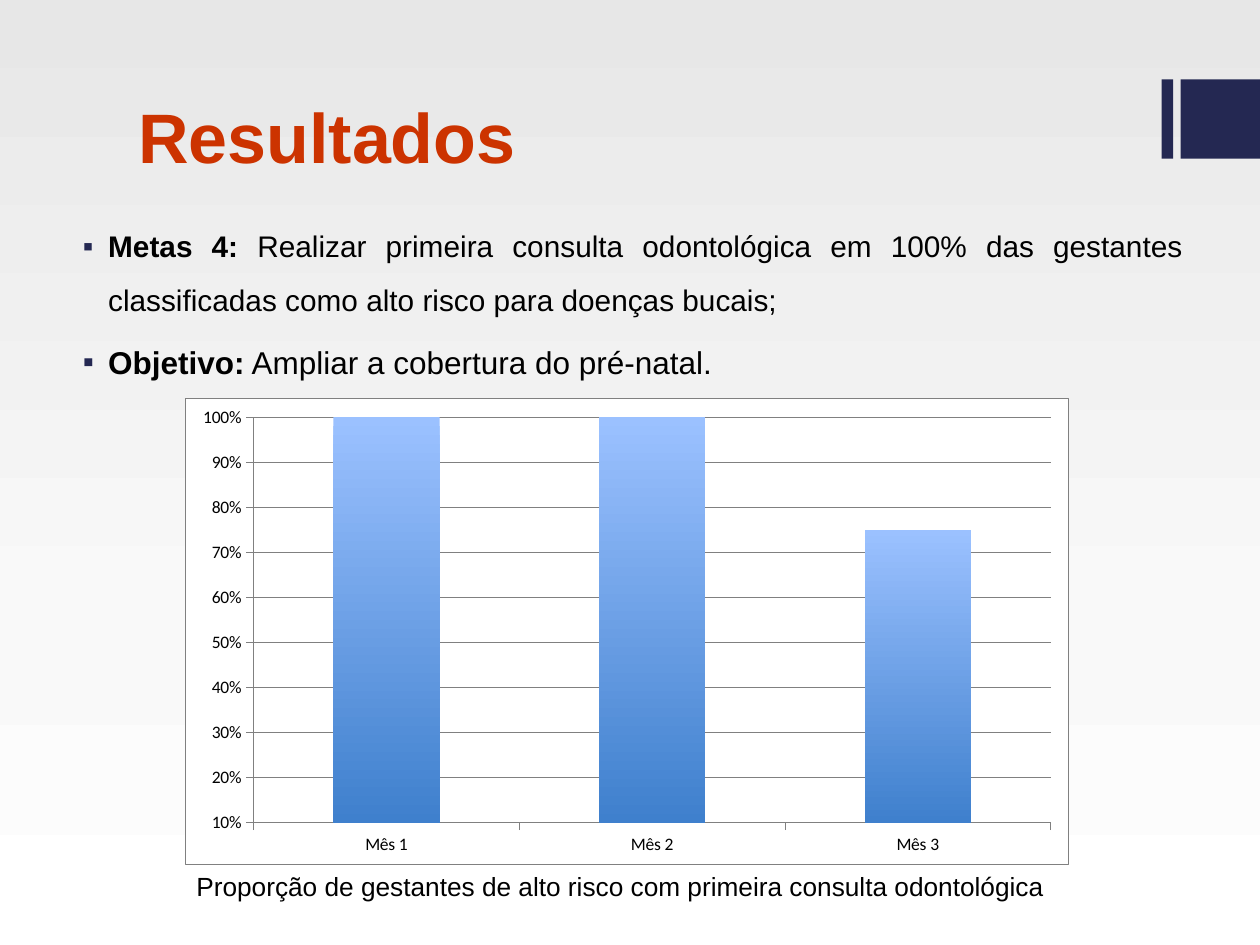
"""Build the results slide with goal 4 and its column chart."""
from lxml import etree
from pptx import Presentation
from pptx.chart.data import CategoryChartData
from pptx.dml.color import RGBColor
from pptx.enum.chart import XL_CHART_TYPE, XL_TICK_MARK
from pptx.enum.shapes import MSO_SHAPE
from pptx.enum.text import MSO_ANCHOR, PP_ALIGN
from pptx.oxml import parse_xml
from pptx.oxml.ns import nsdecls, qn
from pptx.util import Inches, Pt

COLUMN = XL_CHART_TYPE.COLUMN_CLUSTERED
OUTSIDE = XL_TICK_MARK.OUTSIDE
RECTANGLE = MSO_SHAPE.RECTANGLE
BOTTOM = MSO_ANCHOR.BOTTOM
JUSTIFY = PP_ALIGN.JUSTIFY

NAVY = RGBColor(0x24, 0x28, 0x52)
RED = RGBColor(0xCC, 0x33, 0x00)
BLACK = RGBColor(0, 0, 0)
GRAY = RGBColor(0x80, 0x80, 0x80)
BACKGROUND = [(0, RGBColor(0xE7, 0xE7, 0xE7)), (65, RGBColor(0xF9, 0xF9, 0xF9)),
              (100, RGBColor(0xFF, 0xFF, 0xFF))]
BARS = [(0, RGBColor(0x9B, 0xC1, 0xFF)), (100, RGBColor(0x3F, 0x80, 0xCD))]


def set_gradient(parent, stops):
    """Replace a solid fill by a vertical gradient."""
    grad = etree.Element(qn("a:gradFill"), rotWithShape="1")
    gs_list = etree.SubElement(grad, qn("a:gsLst"))
    for pos, color in stops:
        gs = etree.SubElement(gs_list, qn("a:gs"), pos=str(pos * 1000))
        etree.SubElement(gs, qn("a:srgbClr"), val=str(color))
    etree.SubElement(grad, qn("a:lin"), ang="5400000", scaled="0")
    parent.replace(parent.find(qn("a:solidFill")), grad)


def add_run(p, text, size, color=BLACK, bold=False):
    """Append an Arial run to a paragraph."""
    r = p.add_run()
    r.text = text
    r.font.name = "Arial"
    r.font.size = Pt(size)
    r.font.bold = bold
    r.font.color.rgb = color


prs = Presentation()
prs.slide_width = Inches(10)
prs.slide_height = Inches(7.5)
s = prs.slides.add_slide(prs.slide_layouts[6])
s.background.fill.solid()
set_gradient(s.element.find(".//" + qn("p:bgPr")), BACKGROUND)

for left, width in [(9.22, 0.09), (9.37, 0.63)]:
    sp = s.shapes.add_shape(RECTANGLE, Inches(left), Inches(0.63), Inches(width), Inches(0.63))
    sp.shadow.inherit = False
    sp.fill.solid()
    sp.fill.fore_color.rgb = NAVY
    sp.line.fill.background()

tf = s.shapes.add_textbox(Inches(1), Inches(0.2), Inches(8), Inches(1.26)).text_frame
tf.word_wrap = True
tf.vertical_anchor = BOTTOM
add_run(tf.paragraphs[0], "Resultados", 40, RED, True)

goals = [
    ("Metas 4:", " Realizar primeira consulta odontológica em 100% das gestantes "
     "classificadas como alto risco para doenças bucais;", 17),
    ("Objetivo:", " Ampliar a cobertura do pré-natal.", 18),
]
tf = s.shapes.add_textbox(Inches(0.51), Inches(1.62), Inches(8.98), Inches(3.87)).text_frame
tf.word_wrap = True
for i, (label, text, size) in enumerate(goals):
    p = tf.add_paragraph() if i else tf.paragraphs[0]
    p.alignment = JUSTIFY
    p.line_spacing = 1.5
    p.space_before = Pt(size * 0.2)
    add_run(p, label, size, bold=True)
    add_run(p, text, size)
    pPr = p._p.get_or_add_pPr()
    pPr.set("marL", str(Inches(0.25)))
    pPr.set("indent", str(Inches(-0.2)))
    pPr.append(parse_xml(f'<a:buClr {nsdecls("a")}><a:srgbClr val="{NAVY}"/></a:buClr>'))
    pPr.append(parse_xml(f'<a:buFont {nsdecls("a")} typeface="Arial"/>'))
    pPr.append(parse_xml(f'<a:buChar {nsdecls("a")} char="▪"/>'))

data = CategoryChartData(number_format="0%")
data.categories = ["Mês 1", "Mês 2", "Mês 3"]
data.add_series("Series 1", [1, 1, 0.75])
chart = s.shapes.add_chart(COLUMN, Inches(1.47), Inches(3.16), Inches(7.01), Inches(3.7), data).chart
chart.has_legend = False
chart.has_title = False
chart.font.name = "Calibri"
chart.font.size = Pt(10)
chart.font.color.rgb = BLACK
plot = chart.plots[0]
plot.gap_width = 150
plot.vary_by_categories = False
fill = plot.series[0].format.fill
fill.solid()
set_gradient(plot.series[0]._element.find(qn("c:spPr")), BARS)

value_axis = chart.value_axis
value_axis.minimum_scale = 0.1
value_axis.maximum_scale = 1
value_axis.major_unit = 0.1
value_axis.has_major_gridlines = True
value_axis.tick_labels.number_format = "0%"
value_axis.tick_labels.number_format_is_linked = False
for axis in (chart.category_axis, value_axis):
    axis.major_tick_mark = OUTSIDE
for part in (chart.category_axis, value_axis, value_axis.major_gridlines):
    part.format.line.color.rgb = GRAY
    part.format.line.width = Pt(0.25)

white = '<a:solidFill><a:srgbClr val="FFFFFF"/></a:solidFill>'
border = f'<a:ln w="{Pt(0.25)}"><a:solidFill><a:srgbClr val="{GRAY}"/></a:solidFill></a:ln>'
chart_el = chart.element.find(qn("c:chart"))
chart_el.addnext(parse_xml(f'<c:spPr {nsdecls("c", "a")}>{white}{border}</c:spPr>'))
chart_el.find(qn("c:plotArea")).append(parse_xml(f'<c:spPr {nsdecls("c", "a")}>{white}</c:spPr>'))

tf = s.shapes.add_textbox(Inches(1.46), Inches(6.86), Inches(7.01), Inches(0.35)).text_frame
tf.word_wrap = True
add_run(tf.paragraphs[0], "Proporção de gestantes de alto risco com primeira consulta odontológica", 15)

prs.save("out.pptx")
